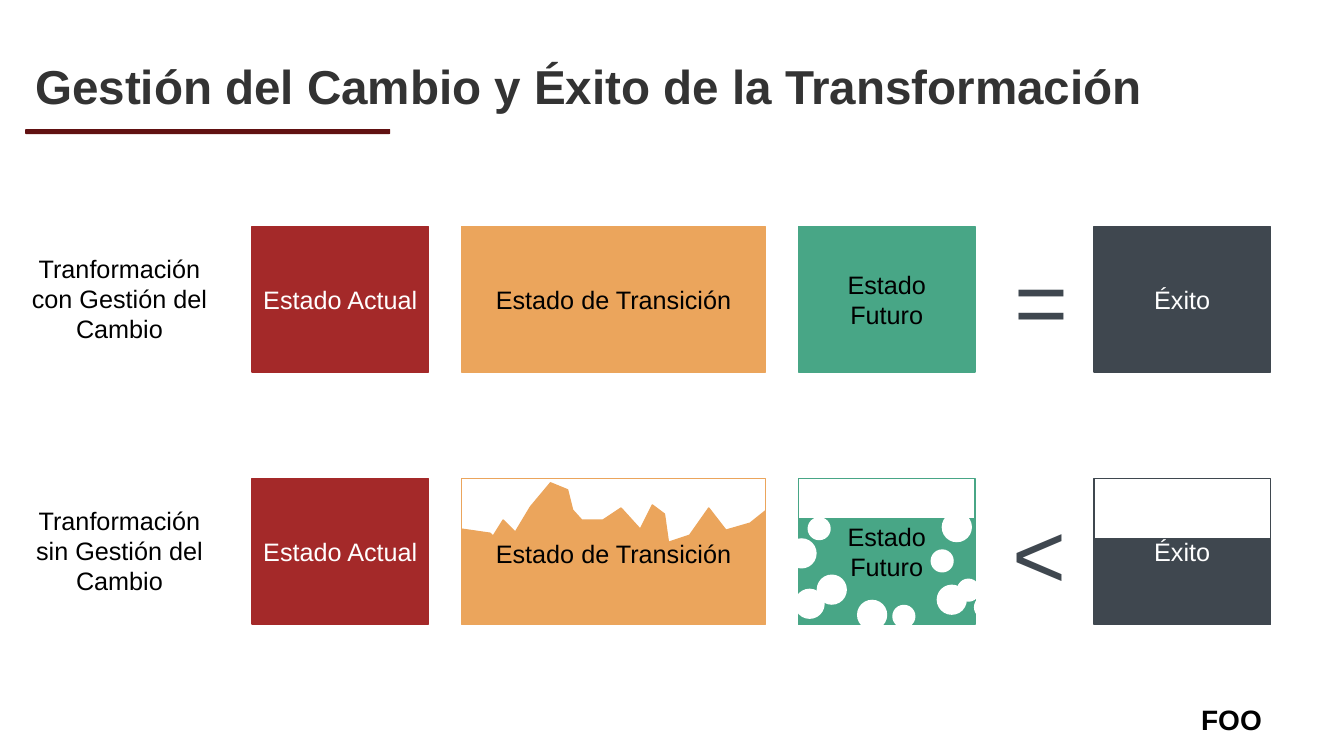
"""Builds the slide on change management and transformation success."""
from pptx import Presentation
from pptx.dml.color import RGBColor
from pptx.enum.shapes import MSO_SHAPE as Kind
from pptx.enum.text import MSO_ANCHOR as Anchor, PP_ALIGN as Align
from pptx.util import Inches, Pt

HUES = {"red": "A42929", "gold": "EBA55C", "green": "48A686", "slate": "3F474F",
        "wine": "611112", "ink": "333333", "black": "000000", "white": "FFFFFF"}
TITLE = "Gestión del Cambio y Éxito de la Transformación"
MARK = "FOO"
NOW = ("Estado Actual", 2.5, 1.75, "red", "white")
SHIFT = ("Estado de Transición", 4.58, 3.01, "gold", "black")
NEXT = ("Estado Futuro", 7.92, 1.75, "green", "black")
WIN = ("Éxito", 10.85, 1.75, "slate", "white")
ROWS = [
    (2.25, "Tranformación con Gestión del Cambio", "=", 9.96, 2.36),
    (4.75, "Tranformación sin Gestión del Cambio", "<", 9.94, 4.87),
]
TALL = 1.44
LEVELS = {"green": 1.04, "slate": 0.85}
RIDGE = [(4.58, 5.25), (4.58, 6.19), (7.59, 6.19), (7.59, 5.07), (7.44, 5.19),
         (7.2, 5.26), (7.03, 5.04), (6.84, 5.31), (6.63, 5.38), (6.59, 5.1),
         (6.47, 5.01), (6.35, 5.25), (6.16, 5.04), (5.98, 5.16), (5.77, 5.16),
         (5.68, 5.06), (5.63, 4.86), (5.46, 4.79), (5.26, 5.03), (5.11, 5.28),
         (4.99, 5.16), (4.89, 5.32), (4.86, 5.29)]
HOLES = {
    0.3: [(7.8, 5.34), (9.34, 5.08), (7.88, 5.84), (8.1, 5.7), (9.29, 5.8), (8.5, 5.95)],
    0.23: [(9.49, 5.74), (9.66, 5.91), (8.85, 6), (9.23, 5.45), (8.01, 5.13)],
}

deck = Presentation()
deck.slide_width, deck.slide_height = Inches(13.33), Inches(7.5)
slide = deck.slides.add_slide(deck.slide_layouts[5])
shapes = slide.shapes


def tint(hue):
    return RGBColor.from_string(HUES[hue])


def write(shape, text, size=18, hue="black", bold=False, align=Align.CENTER,
          anchor=Anchor.MIDDLE, wrap=True, space=None):
    frame = shape.text_frame
    frame.word_wrap, frame.vertical_anchor = wrap, anchor
    frame.text = text
    para = frame.paragraphs[0]
    para.alignment, para.line_spacing = align, space
    font = para.font
    font.name, font.size, font.bold = "Arial", Pt(size), bold
    font.color.rgb = tint(hue)


def label(text, x, y, wide, high, **style):
    box = shapes.add_textbox(*map(Inches, (x, y, wide, high)))
    write(box, text, anchor=Anchor.TOP, **style)


def paint(shape, fill=None, line=None):
    shape.shadow.inherit = False
    if fill:
        shape.fill.solid()
        shape.fill.fore_color.rgb = tint(fill)
    else:
        shape.fill.background()
    if line:
        shape.line.color.rgb = tint(line)
        shape.line.width = Pt(1)
    else:
        shape.line.fill.background()
    return shape


def draw(kind, x, y, wide, high, fill=None, line=None):
    return paint(shapes.add_shape(kind, *map(Inches, (x, y, wide, high))), fill, line)


def state(part, y, full=True):
    text, x, wide, hue, ink = part
    level = LEVELS.get(hue)
    if not full and level:
        draw(Kind.RECTANGLE, x, y + TALL - level, wide, level, hue, hue)
    box = draw(Kind.RECTANGLE, x, y, wide, TALL, hue if full else None, hue)
    if full or level:
        write(box, text, hue=ink)


def ridge(part):
    text, _, _, hue, ink = part
    spots = [(Inches(x), Inches(y)) for x, y in RIDGE]
    path = shapes.build_freeform(*spots[0])
    path.add_line_segments(spots[1:])
    write(paint(path.convert_to_shape(), hue, hue), text, hue=ink)


title = shapes.title
title.left, title.top, title.width, title.height = map(Inches, (0.25, 0.25, 11.24, 0.94))
write(title, TITLE, size=34, hue="ink", bold=True, align=Align.LEFT,
      anchor=Anchor.BOTTOM, space=0.9)
draw(Kind.ROUNDED_RECTANGLE, 0.25, 1.28, 3.62, 0.05, "wine")
label(MARK, 11.23, 6.92, 1.97, 0.44, size=20, bold=True)

for top, name, sign, left, high in ROWS:
    label(name, 0.1, top + 0.21, 2.17, 1.01)
    label(sign, left, high, 0.74, 1.21, size=66, hue="slate", align=Align.LEFT, wrap=False)

good, poor = (row[0] for row in ROWS)
for part in (NOW, SHIFT, NEXT, WIN):
    state(part, good)
state(NOW, poor)
ridge(SHIFT)
for part in (SHIFT, NEXT, WIN):
    state(part, poor, full=False)
for size, spots in HOLES.items():
    for x, y in spots:
        draw(Kind.OVAL, x, y, size, size, "white")

deck.save("out.pptx")
